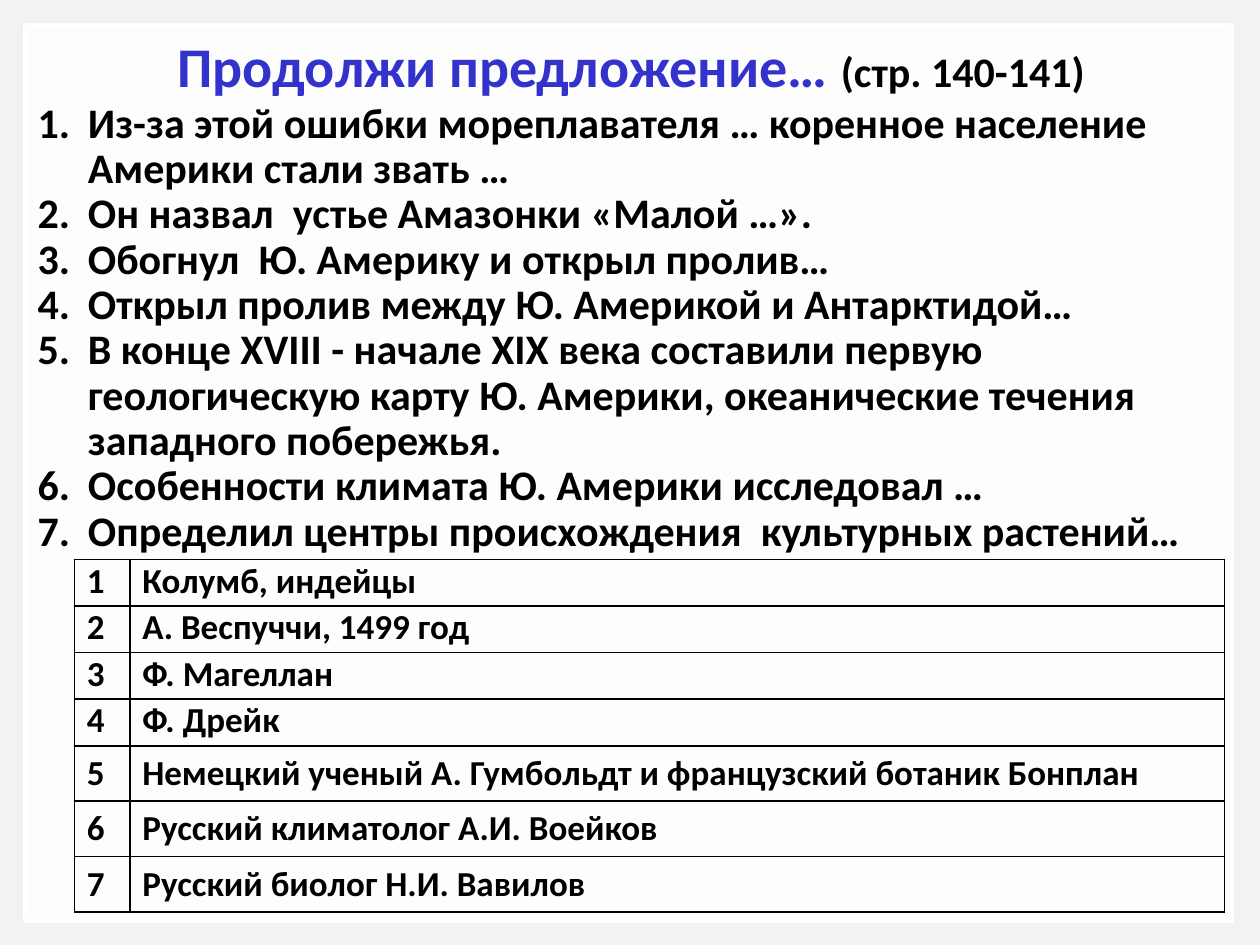
from lxml.etree import SubElement
from pptx import Presentation
from pptx.dml.color import RGBColor
from pptx.enum.shapes import MSO_SHAPE
from pptx.enum.text import MSO_ANCHOR, PP_ALIGN
from pptx.oxml.ns import qn
from pptx.util import Inches, Pt

FONT = "Calibri"
COLORS = {
    "background": "F2F2F2",
    "panel": "FFFFFF",
    "heading": "3333CC",
    "text": "000000",
}

QUESTIONS = [
    "Из-за этой ошибки мореплавателя … коренное население Америки стали звать …",
    "Он назвал  устье Амазонки «Малой …».",
    "Обогнул  Ю. Америку и открыл пролив…",
    "Открыл пролив между Ю. Америкой и Антарктидой…",
    "В конце XVIII - начале XIX века составили первую геологическую карту "
    "Ю. Америки, океанические течения западного побережья.",
    "Особенности климата Ю. Америки исследовал …",
    "Определил центры происхождения  культурных растений…",
]

ANSWERS = [
    "Колумб, индейцы",
    "А. Веспуччи, 1499 год",
    "Ф. Магеллан",
    "Ф. Дрейк",
    "Немецкий ученый А. Гумбольдт и французский ботаник Бонплан",
    "Русский климатолог А.И. Воейков",
    "Русский биолог Н.И. Вавилов",
]
TIGHT_ROWS = 4  # the first answers have closer line spacing


def color(name):
    return RGBColor.from_string(COLORS[name])


def add_run(paragraph, text, size, color_name="text"):
    run = paragraph.add_run()
    run.text = text
    run.font.name = FONT
    run.font.size = Pt(size)
    run.font.bold = True
    run.font.color.rgb = color(color_name)


def add_text_frame(slide, left, top, width, height):
    frame = slide.shapes.add_textbox(
        Inches(left), Inches(top), Inches(width), Inches(height)).text_frame
    frame.word_wrap = True
    return frame


def add_panel(slide):
    panel = slide.shapes.add_shape(
        MSO_SHAPE.RECTANGLE, Inches(0.2), Inches(0.2), Inches(9.58), Inches(7.11))
    panel.shadow.inherit = False
    panel.fill.solid()
    panel.fill.fore_color.rgb = color("panel")
    fill_color = panel.fill._xPr.find(qn("a:solidFill"))[0]
    SubElement(fill_color, qn("a:alpha"), val="85000")
    panel.line.color.rgb = color("panel")
    panel.line.width = Pt(2)


def add_heading(slide):
    frame = add_text_frame(slide, 0.51, 0.13, 9, 0.77)
    frame.vertical_anchor = MSO_ANCHOR.MIDDLE
    heading = frame.paragraphs[0]
    heading.alignment = PP_ALIGN.CENTER
    add_run(heading, "Продолжи предложение… ", 32, "heading")
    add_run(heading, "(стр. 140-141)", 24)


def number_paragraph(paragraph, indent):
    properties = paragraph._p.get_or_add_pPr()
    properties.set("marL", str(Inches(indent)))
    properties.set("indent", str(-Inches(indent)))
    SubElement(properties, qn("a:buFont"), typeface="+mj-lt")
    SubElement(properties, qn("a:buAutoNum"), type="arabicPeriod")


def add_questions(slide):
    frame = add_text_frame(slide, 0.2, 0.76, 9.8, 5.63)
    for index, text in enumerate(QUESTIONS):
        question = frame.add_paragraph() if index else frame.paragraphs[0]
        number_paragraph(question, 0.4)
        question.line_spacing = 0.9
        add_run(question, text, 24)


def add_borders(cell):
    properties = cell._tc.get_or_add_tcPr()
    for side in ("lnL", "lnR", "lnT", "lnB"):
        border = SubElement(properties, qn(f"a:{side}"), w=str(Pt(1)))
        fill = SubElement(border, qn("a:solidFill"))
        SubElement(fill, qn("a:srgbClr"), val=COLORS["text"])


def add_answers(slide):
    heights = [0.37 if row < TIGHT_ROWS else 0.44 for row in range(len(ANSWERS))]
    table = slide.shapes.add_table(
        len(ANSWERS), 2, Inches(0.59), Inches(4.44),
        Inches(9.13), Inches(sum(heights))).table
    table.first_row = False
    table.horz_banding = False
    table.columns[0].width = Inches(0.44)
    table.columns[1].width = Inches(8.69)
    for row, (answer, height) in enumerate(zip(ANSWERS, heights)):
        table.rows[row].height = Inches(height)
        for column, text in enumerate((str(row + 1), answer)):
            cell = table.cell(row, column)
            add_borders(cell)
            cell.fill.background()
            line = cell.text_frame.paragraphs[0]
            if row < TIGHT_ROWS:
                line.line_spacing = 0.8
            add_run(line, text, 20)


def main():
    presentation = Presentation()
    presentation.slide_width = Inches(10)
    presentation.slide_height = Inches(7.5)
    slide = presentation.slides.add_slide(presentation.slide_layouts[6])

    # Backdrop
    slide.background.fill.solid()
    slide.background.fill.fore_color.rgb = color("background")
    add_panel(slide)

    # Heading, numbered questions and the answer key
    add_heading(slide)
    add_questions(slide)
    add_answers(slide)

    presentation.save("out.pptx")


if __name__ == "__main__":
    main()
